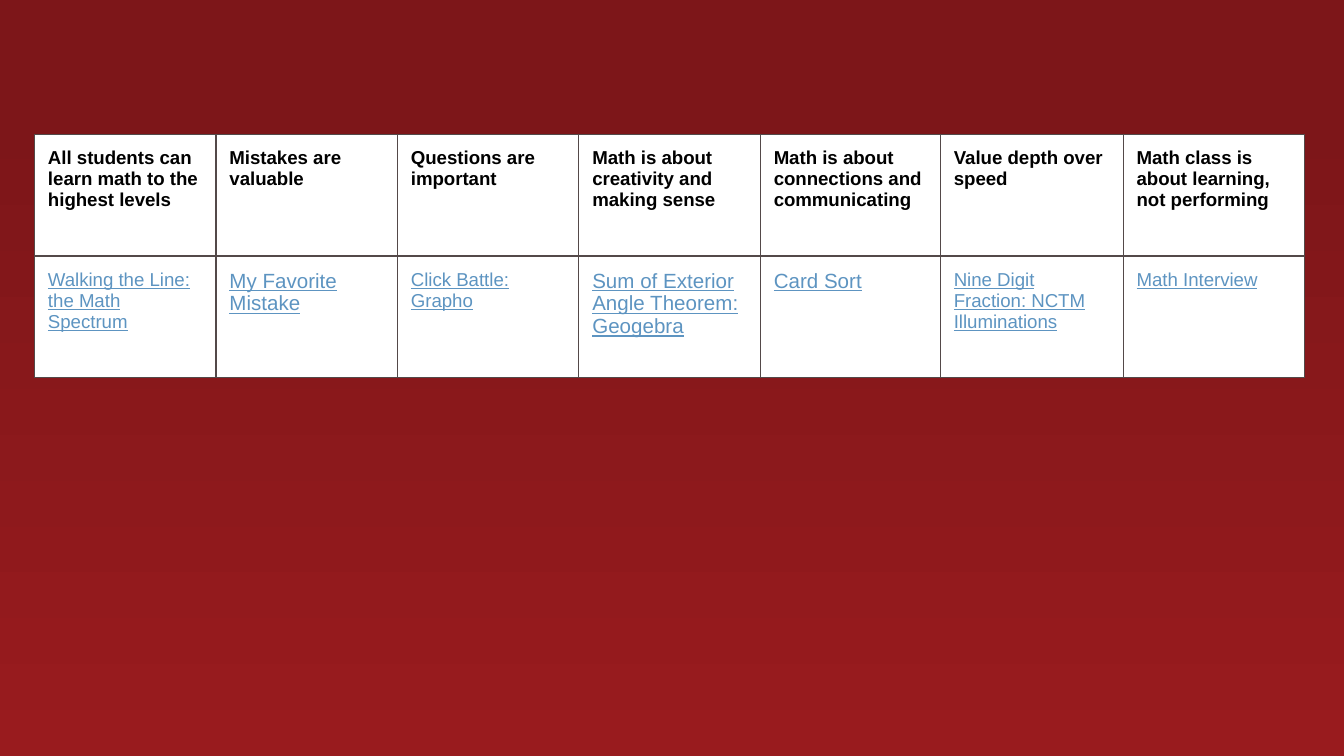
from dataclasses import dataclass

from lxml.etree import SubElement
from pptx import Presentation
from pptx.dml.color import RGBColor
from pptx.oxml.ns import qn
from pptx.slide import Slide
from pptx.table import _Cell
from pptx.util import Emu, Inches, Pt

SLIDE_WIDTH = Inches(10)
SLIDE_HEIGHT = Emu(SLIDE_WIDTH * 9 // 16)
TABLE_LEFT = 2.57
TABLE_TOP = 17.8
COLUMN_SHARES = (13.5, 13.5, 13.5, 13.5, 13.4, 13.6, 13.5)
ROW_SHARE = 16.08
CELL_MARGIN = Inches(0.1)
BORDER_COLOR = "534949"


@dataclass(frozen=True)
class Norm:
    title: str
    activity: str
    activity_size: int = 10


NORMS = (
    Norm("All students can learn math to the highest levels", "Walking the Line: the Math Spectrum"),
    Norm("Mistakes are valuable", "My Favorite Mistake", 11),
    Norm("Questions are important", "Click Battle: Grapho"),
    Norm("Math is about creativity and making sense", "Sum of Exterior Angle Theorem: Geogebra", 11),
    Norm("Math is about connections and communicating", "Card Sort", 11),
    Norm("Value depth over speed", "Nine Digit Fraction: NCTM Illuminations"),
    Norm("Math class is about learning, not performing", "Math Interview"),
)


def color(hex_value: str) -> RGBColor:
    return RGBColor.from_string(hex_value)


def across(percent: float) -> Emu:
    return Emu(round(SLIDE_WIDTH * percent / 100))


def down(percent: float) -> Emu:
    return Emu(round(SLIDE_HEIGHT * percent / 100))


def paint_background(slide: Slide) -> None:
    fill = slide.background.fill
    fill.gradient()
    fill.gradient_angle = 90
    for stop, position, shade in zip(fill.gradient_stops, (0, 0.85), ("991B1E", "7D1619")):
        stop.position = position
        stop.color.rgb = color(shade)


def outline_cell(cell: _Cell) -> None:
    properties = cell._tc.get_or_add_tcPr()
    for index, side in enumerate(("a:lnL", "a:lnR", "a:lnT", "a:lnB")):
        line = SubElement(properties, qn(side), w=str(Pt(0.75)))
        fill = SubElement(line, qn("a:solidFill"))
        SubElement(fill, qn("a:srgbClr"), val=BORDER_COLOR)
        properties.insert(index, line)


def write_cell(cell: _Cell, text: str, size: int, shade: str, is_link: bool) -> None:
    cell.fill.solid()
    cell.fill.fore_color.rgb = color("FFFFFF")
    cell.margin_left = cell.margin_right = CELL_MARGIN
    cell.margin_top = cell.margin_bottom = CELL_MARGIN
    outline_cell(cell)
    run = cell.text_frame.paragraphs[0].add_run()
    run.text = text
    run.font.name = "Arial"
    run.font.size = Pt(size)
    run.font.bold = not is_link
    run.font.underline = is_link
    run.font.color.rgb = color(shade)


def add_norms_table(slide: Slide) -> None:
    shape = slide.shapes.add_table(
        2, len(NORMS), across(TABLE_LEFT), down(TABLE_TOP),
        across(sum(COLUMN_SHARES)), down(2 * ROW_SHARE),
    )
    table = shape.table
    table.first_row = table.horz_banding = False
    for row in table.rows:
        row.height = down(ROW_SHARE)
    for index, (norm, share) in enumerate(zip(NORMS, COLUMN_SHARES)):
        table.columns[index].width = across(share)
        write_cell(table.cell(0, index), norm.title, 10, "000000", False)
        write_cell(table.cell(1, index), norm.activity, norm.activity_size, "5D94C1", True)


def main() -> None:
    presentation = Presentation()
    presentation.slide_width = SLIDE_WIDTH
    presentation.slide_height = SLIDE_HEIGHT
    slide = presentation.slides.add_slide(presentation.slide_layouts[6])
    paint_background(slide)
    add_norms_table(slide)
    presentation.save("out.pptx")


if __name__ == "__main__":
    main()
